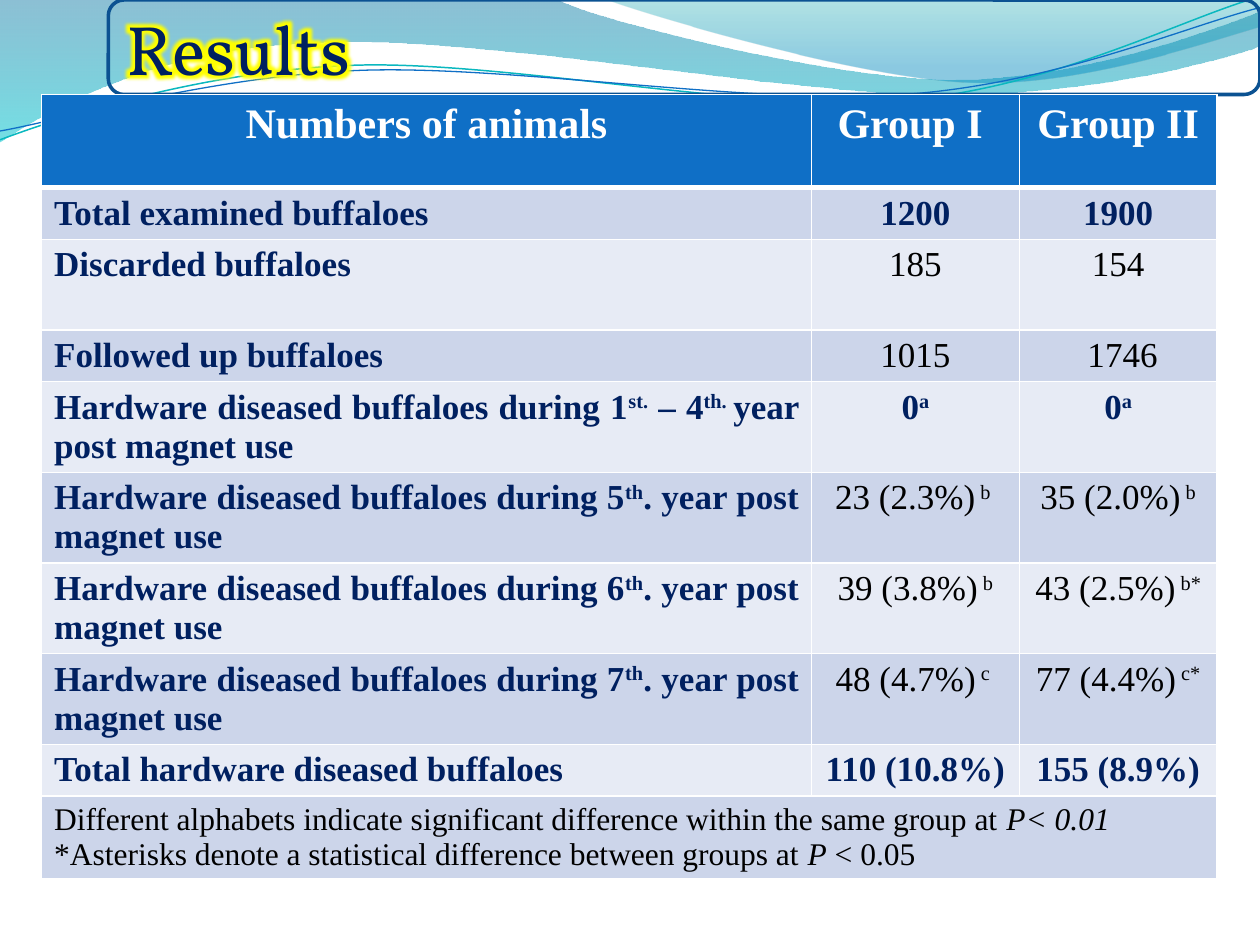
import pptx
import pptx.dml.color
import pptx.enum.shapes
import pptx.enum.text
import pptx.oxml
import pptx.oxml.ns
import pptx.util

Inches = pptx.util.Inches
Pt = pptx.util.Pt
ALIGN = pptx.enum.text.PP_ALIGN
NAVY, BLUE, BLACK, WHITE = "002060", "0F6FC6", "000000", "FFFFFF"
BANDS = ("E7EBF5", "CCD5EA")
UNITS = 1000

COLUMN_WIDTHS = (6.11, 1.65, 1.57)
ROW_HEIGHTS = (0.74, 0.41, 0.72, 0.41, 0.72, 0.72, 0.72, 0.72, 0.41, 0.65)
BOLD_ROWS = (1, 4, 8)
ROWS = (
    ("Numbers of animals", "Group I ", "Group II"),
    ("Total examined buffaloes", "1200", "1900"),
    ("Discarded buffaloes", "185", "154"),
    ("Followed up buffaloes", "1015", " 1746"),
    ("Hardware diseased buffaloes during 1^st.^ – 4^th. ^year post magnet use", "0^a", "0^a"),
    ("Hardware diseased buffaloes during 5^th^. year post magnet use", "23 (2.3%)^ b ", "35 (2.0%)^ b"),
    ("Hardware diseased buffaloes during 6^th^. year post magnet use", "39 (3.8%)^ b", "43 (2.5%)^ b*"),
    ("Hardware diseased buffaloes during 7^th^. year post magnet use", "48 (4.7%)^ c ", "77 (4.4%)^ c*"),
    ("Total hardware diseased buffaloes", "110 (10.8%) ", "155 (8.9%)"),
)
NOTES = (
    "Different alphabets indicate significant difference within the same group at ^P< 0.01",
    "*Asterisks denote a statistical difference between groups at ^P^ < 0.05",
)

LEFT_WAVE = (
    [(0, 0)],
    [(4.4, -0.01)],
    [(4.76, 0.17), (6.64, 0.63), (7.58, 0.63)],
    [(8.53, 0.63), (9.58, 0.26), (10, 0.09)],
    [(10.01, 0.36)],
    [(9.83, 0.44), (8.7, 0.76), (7.46, 0.75)],
    [(6.22, 0.75), (3.82, 0.28), (2.57, 0.34)],
    [(1.29, 0.36), (0.46, 0.83), (-0.01, 1.13)],
    [(0, 0)],
)
RIGHT_WAVE = (
    [(4.79, -0.01)],
    [(5.09, 0.11), (6.82, 0.62), (7.69, 0.65)],
    [(8.56, 0.69), (9.61, 0.32), (10, 0.21)],
    [(10, 0)],
    [(4.79, -0.01)],
)
TEAL_CURVE = (
    [(0, 1.11)],
    [(0.48, 0.93), (1.58, 0.57), (2.77, 0.52)],
    [(3.95, 0.47), (5.93, 0.89), (7.13, 0.8)],
    [(8.33, 0.71), (9.38, 0.15), (9.98, -0.02)],
)
BLUE_CURVE = (
    [(0, 1.04)],
    [(0.47, 0.96), (1.64, 0.61), (2.83, 0.56)],
    [(4.03, 0.51), (5.97, 0.84), (7.17, 0.75)],
    [(8.36, 0.67), (9.41, 0.21), (10, 0.06)],
)


def color(value):
    """Return the colour for a hex string."""
    return pptx.dml.color.RGBColor.from_string(value)


def element(markup):
    """Parse a DrawingML element given without its namespace declaration."""
    head, mark, tail = markup.partition(" ")
    return pptx.oxml.parse_xml(f"{head} {pptx.oxml.ns.nsdecls('a')}{mark}{tail}")


def add_curve(slide, segments, closed):
    """Add a freeform of straight and cubic segments."""
    anchors = [tuple(round(value * UNITS) for value in segment[-1]) for segment in segments]
    left, top = map(min, zip(*anchors))
    builder = slide.shapes.build_freeform(*anchors[0], scale=Inches(1) / UNITS)
    builder.add_line_segments(anchors[1:], close=closed)
    shape = builder.convert_to_shape()
    shape.shadow.inherit = False
    lines = list(shape._element.iter(pptx.oxml.ns.qn("a:lnTo")))
    for line, segment in zip(lines, segments[1:]):
        if len(segment) == 3:
            points = "".join(f'<a:pt x="{round(x * UNITS) - left}" y="{round(y * UNITS) - top}"/>'
                             for x, y in segment)
            line.getparent().replace(line, element(f"<a:cubicBezTo >{points}</a:cubicBezTo>"))
    return shape


def add_wave(slide, segments, stops):
    """Add a closed wave with a translucent vertical gradient."""
    shape = add_curve(slide, segments, True)
    shape.line.fill.background()
    shape.fill.gradient()
    shape.fill.gradient_angle = 270
    for stop, (position, value, opacity) in zip(shape.fill.gradient_stops, stops):
        stop.position = position
        stop.color.rgb = color(value)
        stop._gs[0].append(element(f'<a:alpha val="{opacity * 1000}"/>'))


def add_stroke(slide, segments, value, width):
    """Add an open curved line."""
    shape = add_curve(slide, segments, False)
    shape.fill.background()
    shape.line.color.rgb = color(value)
    shape.line.width = Pt(width)


def format_font(font, name, size, value, bold=False):
    """Set the typeface, size, colour and weight of a font."""
    font.name, font.size, font.bold = name, Pt(size), bold
    font.color.rgb = color(value)


def add_title_frame(slide):
    """Add the rounded outline around the title."""
    frame = slide.shapes.add_shape(pptx.enum.shapes.MSO_SHAPE.ROUNDED_RECTANGLE,
                                   Inches(0.86), 0, Inches(9.14), Inches(0.75))
    frame.shadow.inherit = False
    frame.fill.background()
    frame.line.color.rgb = color("0B5292")
    frame.line.width = Pt(2)


def add_title(slide, text):
    """Place the title placeholder with glowing text."""
    title = slide.shapes.title
    title.left, title.top, title.width, title.height = map(Inches, (0.86, 0, 9.14, 0.75))
    title.text_frame.text = text
    title.text_frame.margin_left = Inches(0.14)
    title.text_frame.vertical_anchor = pptx.enum.text.MSO_ANCHOR.MIDDLE
    paragraph = title.text_frame.paragraphs[0]
    paragraph.alignment = ALIGN.LEFT
    font = paragraph.runs[0].font
    format_font(font, "Vollkorn", 40, NAVY)
    glow = '<a:effectLst ><a:glow rad="101600"><a:srgbClr val="FFFF00"/></a:glow></a:effectLst>'
    font._element.find(pptx.oxml.ns.qn("a:solidFill")).addnext(element(glow))
    slide.shapes._spTree.append(title._element)


def superscript(font):
    """Raise a run by thirty percent."""
    font._element.set("baseline", "30000")


def italic(font):
    """Slant a run."""
    font.italic = True


def write_runs(paragraph, text, size, value, bold, emphasize):
    """Write text whose parts between carets are emphasized."""
    for index, part in enumerate(text.split("^")):
        if part:
            run = paragraph.add_run()
            run.text = part
            format_font(run.font, "Times New Roman", size, value, bold)
            if index % 2:
                emphasize(run.font)


def format_cell(cell, fill, bottom):
    """Fill a cell and draw its white borders."""
    properties = cell._tc.get_or_add_tcPr()
    for side, width in (("L", 1), ("R", 1), ("T", 1), ("B", bottom)):
        properties.append(element(
            f'<a:ln{side} w="{Pt(width)}"><a:solidFill><a:srgbClr val="{WHITE}"/></a:solidFill></a:ln{side}>'))
    cell.fill.solid()
    cell.fill.fore_color.rgb = color(fill)


def add_results_table(slide):
    """Add the table of animal numbers with its merged notes row."""
    frame = slide.shapes.add_table(len(ROW_HEIGHTS), len(COLUMN_WIDTHS), Inches(0.33), Inches(0.75),
                                   Inches(sum(COLUMN_WIDTHS)), Inches(sum(ROW_HEIGHTS)))
    table = frame.table
    for column, width in zip(table.columns, COLUMN_WIDTHS):
        column.width = Inches(width)
    for index, (row, height) in enumerate(zip(table.rows, ROW_HEIGHTS)):
        row.height = Inches(height)
        for cell in row.cells:
            format_cell(cell, BANDS[index % 2] if index else BLUE, 1 if index else 3)
    for row_index, texts in enumerate(ROWS):
        for column_index, text in enumerate(texts):
            header = row_index == 0
            bold = header or column_index == 0 or row_index in BOLD_ROWS
            value = WHITE if header else NAVY if bold else BLACK
            paragraph = table.cell(row_index, column_index).text_frame.paragraphs[0]
            paragraph.alignment = ALIGN.CENTER if header or column_index else ALIGN.JUSTIFY
            write_runs(paragraph, text, 24 if header else 20, value, bold, superscript)
    last = len(ROWS)
    notes = table.cell(last, 0)
    notes.merge(table.cell(last, len(COLUMN_WIDTHS) - 1))
    notes.text_frame.add_paragraph()
    for paragraph, text in zip(notes.text_frame.paragraphs, NOTES):
        write_runs(paragraph, text, 18, BLACK, False, italic)


def main():
    """Build and save the results slide."""
    presentation = pptx.Presentation()
    presentation.slide_width, presentation.slide_height = Inches(10), Inches(7.5)
    slide = presentation.slides.add_slide(presentation.slide_layouts[5])
    add_wave(slide, LEFT_WAVE, ((0, "0074A1", 45), (1, "00C6CF", 55)))
    add_wave(slide, RIGHT_WAVE, ((0, "00A1A9", 30), (0.8, "008BBF", 45)))
    add_stroke(slide, TEAL_CURVE, "0AB8BF", 0.85)
    add_stroke(slide, BLUE_CURVE, BLUE, 0.75)
    add_title_frame(slide)
    add_title(slide, "Results")
    add_results_table(slide)
    presentation.save("out.pptx")


if __name__ == "__main__":
    main()
